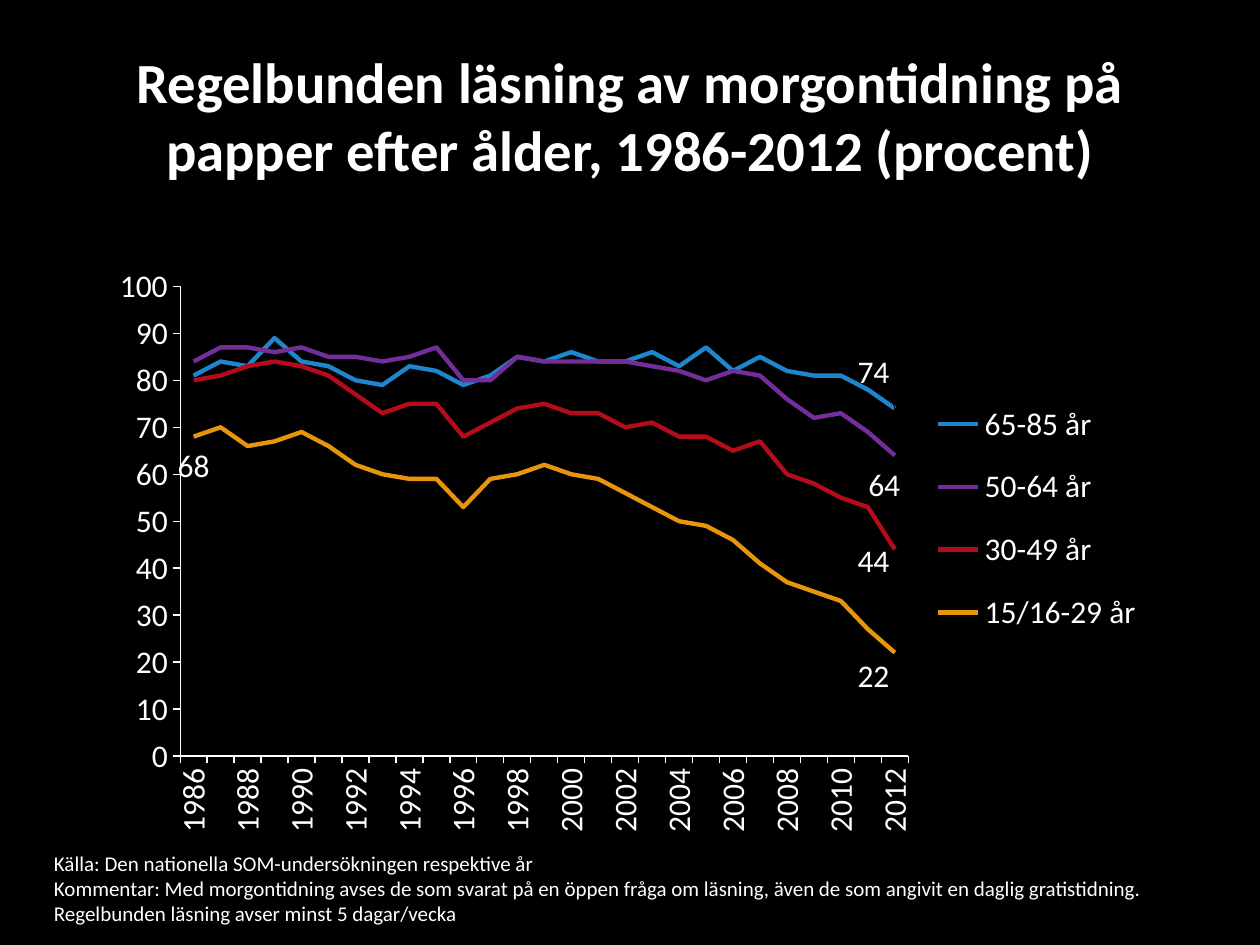
import pptx
import pptx.util
import pptx.dml.color
import pptx.chart.data
import pptx.enum.chart
import pptx.enum.text
import pptx.oxml
import pptx.oxml.ns

RGB = pptx.dml.color.RGBColor
WHITE = RGB(0xFF, 0xFF, 0xFF)
BLACK = RGB(0x00, 0x00, 0x00)
BLUE = RGB(0x1D, 0x86, 0xCD)
PURPLE = RGB(0x73, 0x2E, 0x9A)
RED = RGB(0xB5, 0x0B, 0x1B)
ORANGE = RGB(0xE8, 0x95, 0x0E)
FONT = "Calibri"
SCALE = 9144

ENUM = pptx.enum.chart
ALIGN = pptx.enum.text.PP_ALIGN
ANCHOR = pptx.enum.text.MSO_ANCHOR
ABOVE = ENUM.XL_LABEL_POSITION.ABOVE
BELOW = ENUM.XL_LABEL_POSITION.BELOW

YEARS = range(1986, 2013)
LAST = len(YEARS) - 1
GROUPS = [
    ("65-85 år", BLUE,
     [81, 84, 83, 89, 84, 83, 80, 79, 83, 82, 79, 81, 85, 84,
      86, 84, 84, 86, 83, 87, 82, 85, 82, 81, 81, 78, 74],
     [(LAST, ABOVE, -0.02, -0.02)]),
    ("50-64 år", PURPLE,
     [84, 87, 87, 86, 87, 85, 85, 84, 85, 87, 80, 80, 85, 84,
      84, 84, 84, 83, 82, 80, 82, 81, 76, 72, 73, 69, 64],
     [(LAST, BELOW, -0.01, 0.01)]),
    ("30-49 år", RED,
     [80, 81, 83, 84, 83, 81, 77, 73, 75, 75, 68, 71, 74, 75,
      73, 73, 70, 71, 68, 68, 65, 67, 60, 58, 55, 53, 44],
     [(LAST, BELOW, -0.02, -0.02)]),
    ("15/16-29 år", ORANGE,
     [68, 70, 66, 67, 69, 66, 62, 60, 59, 59, 53, 59, 60, 62,
      60, 59, 56, 53, 50, 49, 46, 41, 37, 35, 33, 27, 22],
     [(0, BELOW, 0, 0.01), (LAST, BELOW, -0.02, 0)]),
]
NOTES = [
    "Källa: Den nationella SOM-undersökningen respektive år",
    "Kommentar: Med morgontidning avses de som svarat på en öppen fråga om "
    "läsning, även de som angivit en daglig gratistidning. "
    "Regelbunden läsning avser minst 5 dagar/vecka",
]


def px(*sizes):
    return [pptx.util.Emu(size * SCALE) for size in sizes]


def style(font, size, bold=False):
    font.name = FONT
    font.size = pptx.util.Pt(size)
    font.bold = bold
    font.color.rgb = WHITE


def write(frame, lines, size, bold=False, align=ALIGN.LEFT, anchor=ANCHOR.TOP):
    frame.word_wrap = True
    frame.vertical_anchor = anchor
    for row, line in enumerate(lines):
        para = frame.add_paragraph() if row else frame.paragraphs[0]
        para.alignment = align
        run = para.add_run()
        run.text = line
        style(run.font, size, bold)


def arrange(parent, index, **parts):
    for old in parent.findall(pptx.oxml.ns.qn("c:layout")):
        parent.remove(old)
    body = "".join(f'<c:{key} val="{val}"/>' for key, val in parts.items())
    space = pptx.oxml.ns.nsdecls("c")
    parent.insert(index, pptx.oxml.parse_xml(
        f"<c:layout {space}><c:manualLayout>{body}</c:manualLayout></c:layout>"))


class Deck:
    def __init__(self):
        self.show = pptx.Presentation()
        self.show.slide_width, self.show.slide_height = px(1000, 750)
        self.slide = self.show.slides.add_slide(self.show.slide_layouts[5])
        fill = self.slide.background.fill
        fill.solid()
        fill.fore_color.rgb = BLACK

    def title(self, text, *box):
        shape = self.slide.shapes.title
        shape.left, shape.top, shape.width, shape.height = px(*box)
        write(shape.text_frame, [text], 32.4, bold=True,
              align=ALIGN.CENTER, anchor=ANCHOR.MIDDLE)

    def text(self, lines, *box):
        write(self.slide.shapes.add_textbox(*px(*box)).text_frame, lines, 12)

    def axis(self, axis):
        axis.has_major_gridlines = False
        axis.major_tick_mark = ENUM.XL_TICK_MARK.OUTSIDE
        axis.minor_tick_mark = ENUM.XL_TICK_MARK.NONE
        axis.format.line.color.rgb = WHITE
        axis.format.line.width = pptx.util.Pt(0.75)
        style(axis.tick_labels.font, 18)

    def label(self, series, point, place, dx, dy):
        label = series.points[point].data_label
        label.position = place
        style(label.font, 18)
        node = series.data_labels._element.xpath(
            f"c:dLbl[c:idx/@val='{point}']")[0]
        arrange(node, 1, x=dx, y=dy)

    def chart(self, *box):
        data = pptx.chart.data.CategoryChartData()
        data.categories = [str(year) for year in YEARS]
        for name, color, values, labels in GROUPS:
            data.add_series(name, values)
        chart = self.slide.shapes.add_chart(
            ENUM.XL_CHART_TYPE.LINE, *px(*box), data).chart
        chart.has_title = False
        style(chart.font, 18)
        chart.has_legend = True
        chart.legend.position = ENUM.XL_LEGEND_POSITION.RIGHT
        chart.legend.include_in_layout = False
        style(chart.legend.font, 18)
        edge = dict(xMode="edge", yMode="edge")
        arrange(chart.legend._element, 1, **edge, x=0.77, y=0.21, w=0.22, h=0.47)
        area = chart._chartSpace.chart.plotArea
        arrange(area, 0, layoutTarget="inner", **edge,
                x=0.08, y=0.05, w=0.68, h=0.8)

        years, scale = chart.category_axis, chart.value_axis
        self.axis(years)
        self.axis(scale)
        scale.minimum_scale, scale.maximum_scale = 0, 100
        scale.major_unit = 10
        turn = years._element.txPr.bodyPr
        turn.set("rot", "-5400000")
        turn.set("vert", "horz")
        skip = pptx.oxml.parse_xml(
            f'<c:tickLblSkip {pptx.oxml.ns.nsdecls("c")} val="2"/>')
        years._element.xpath("c:noMultiLvlLbl")[0].addprevious(skip)

        plot = chart.plots[0]
        plot.vary_by_categories = False
        for series, (name, color, values, labels) in zip(plot.series, GROUPS):
            series.smooth = False
            series.marker.style = ENUM.XL_MARKER_STYLE.NONE
            series.format.line.color.rgb = color
            series.format.line.width = pptx.util.Pt(2.5)
            series.data_labels.show_value = False
            for label in labels:
                self.label(series, *label)


def main():
    deck = Deck()
    deck.title("Regelbunden läsning av morgontidning på papper efter ålder, "
               "1986-2012 (procent)", 75, 13, 850, 156)
    deck.chart(75, 204, 850, 466)
    deck.text(NOTES, 33, 670, 949, 71)
    deck.show.save("out.pptx")


if __name__ == "__main__":
    main()
